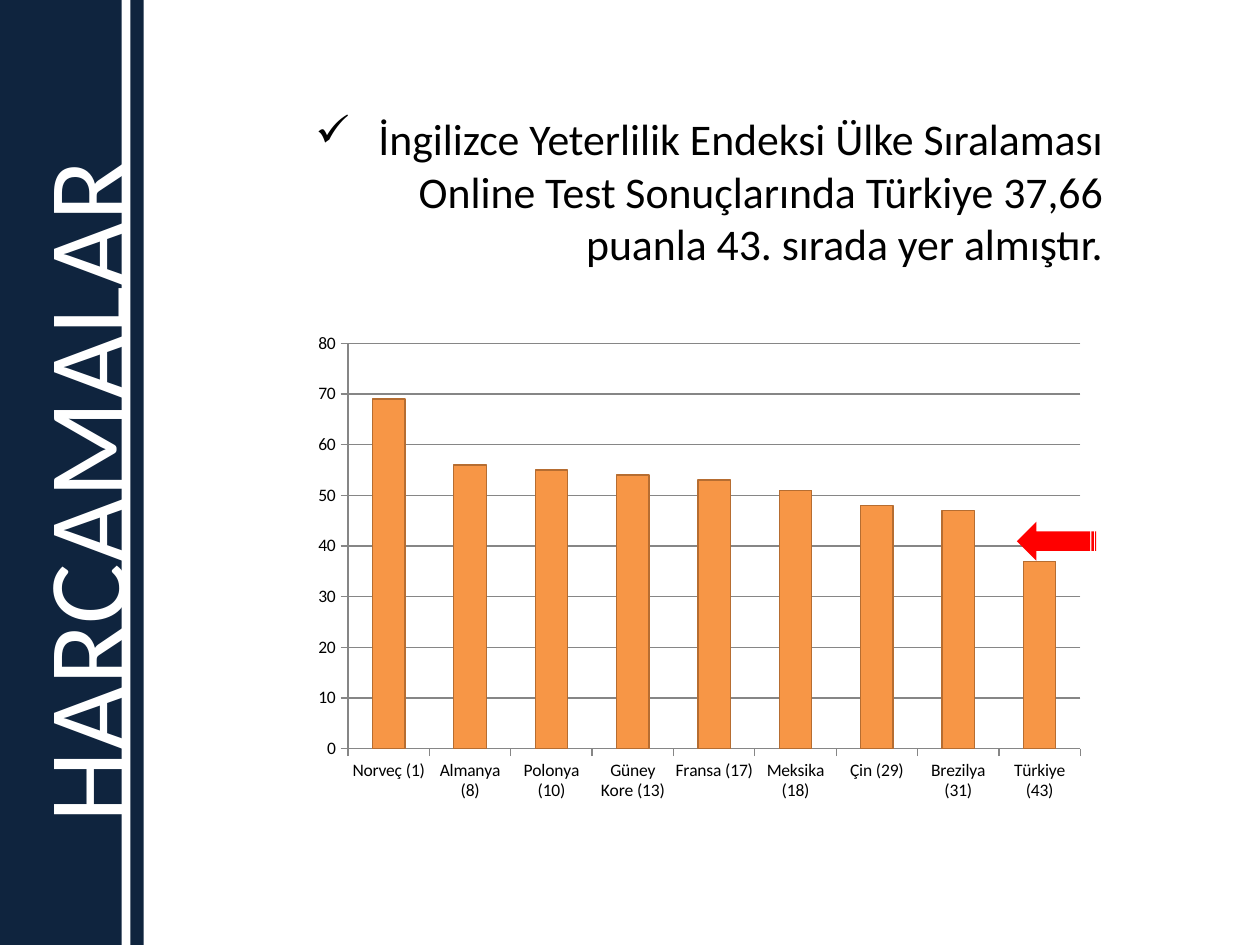
"""Build the slide on English proficiency scores by country."""
from dataclasses import dataclass

from lxml import etree
from pptx import Presentation
from pptx import util as u
from pptx.chart.data import CategoryChartData
from pptx.dml.color import RGBColor
from pptx.enum import chart as ch
from pptx.enum import shapes, text
from pptx.oxml.ns import qn

NAVY = RGBColor(0x0F, 0x24, 0x3E)
WHITE = RGBColor(0xFF, 0xFF, 0xFF)
BLACK = RGBColor(0, 0, 0)
RED = RGBColor(0xFF, 0, 0)
ORANGE = RGBColor(0xF7, 0x96, 0x46)
BROWN = RGBColor(0xB6, 0x6D, 0x31)
GREY = RGBColor(0x86, 0x86, 0x86)
FONT = "Calibri"
COLS, ROWS = 100, 75
WIDE, HIGH = u.Inches(10), u.Inches(7.5)
SCORES = {
    "Norveç (1)": 69,
    "Almanya (8)": 56,
    "Polonya (10)": 55,
    "Güney Kore (13)": 54,
    "Fransa (17)": 53,
    "Meksika (18)": 51,
    "Çin (29)": 48,
    "Brezilya (31)": 47,
    "Türkiye (43)": 37,
}


@dataclass(frozen=True)
class Box:
    """Hold a place in grid columns and rows."""
    col: float
    row: float
    cols: float
    rows: float

    def emu(self) -> tuple[int, int, int, int]:
        """Return left, top, width and height."""
        dx, dy = WIDE / COLS, HIGH / ROWS
        return (round(self.col * dx), round(self.row * dy),
                round(self.cols * dx), round(self.rows * dy))


@dataclass(frozen=True)
class Form:
    """Describe a plain filled shape."""
    box: Box
    fill: RGBColor
    kind: shapes.MSO_SHAPE = shapes.MSO_SHAPE.RECTANGLE
    turn: float = 0


BANDS = (
    Form(Box(0, 0, 11.4, ROWS), NAVY),
    Form(Box(9.65, 0, 0.7, ROWS), WHITE),
)
ARROW = Form(Box(80.7, 41.4, 6.3, 3.1), RED,
             shapes.MSO_SHAPE.STRIPED_RIGHT_ARROW, 180)


def add_form(slide, form: Form) -> None:
    """Draw a filled shape without outline or shadow."""
    shape = slide.shapes.add_shape(form.kind, *form.box.emu())
    shape.shadow.inherit = False
    shape.fill.solid()
    shape.fill.fore_color.rgb = form.fill
    shape.line.fill.background()
    shape.rotation = form.turn


def add_text(slide, words: str, box: Box, *, size: float, color: RGBColor,
             align: text.PP_ALIGN, anchor=text.MSO_ANCHOR.TOP,
             turn: float = 0, bullet: str = "") -> None:
    """Write one paragraph with the given format."""
    shape = slide.shapes.add_textbox(*box.emu())
    shape.rotation = turn
    frame = shape.text_frame
    frame.word_wrap = True
    frame.vertical_anchor = anchor
    para = frame.paragraphs[0]
    para.text = words
    para.alignment = align
    if bullet:
        props = para._p.get_or_add_pPr()
        props.set("marL", str(u.Inches(0.5)))
        props.set("indent", str(-u.Inches(0.5)))
        etree.SubElement(props, qn("a:buChar"), char=bullet)
    font = para.runs[0].font
    font.name, font.size = FONT, u.Pt(size)
    font.color.rgb = color


def add_chart(slide, box: Box) -> None:
    """Draw the column chart of scores."""
    data = CategoryChartData()
    data.categories = list(SCORES)
    data.add_series("Series 1", list(SCORES.values()))
    chart = slide.shapes.add_chart(
        ch.XL_CHART_TYPE.COLUMN_STACKED, *box.emu(), data).chart
    chart.has_legend = chart.has_title = False
    chart.font.name, chart.font.size = FONT, u.Pt(10)
    chart.font.color.rgb = BLACK
    plot = chart.plots[0]
    plot.vary_by_categories = False
    plot.gap_width, plot.overlap = 150, 100
    bars = plot.series[0].format
    bars.fill.solid()
    bars.fill.fore_color.rgb = ORANGE
    bars.line.color.rgb = BROWN
    bars.line.width = u.Pt(0.75)
    score = chart.value_axis
    score.minimum_scale, score.maximum_scale = 0, 80
    score.major_unit = 10
    score.has_major_gridlines = True
    for axis in (chart.category_axis, score):
        axis.major_tick_mark = ch.XL_TICK_MARK.OUTSIDE
        axis.minor_tick_mark = ch.XL_TICK_MARK.NONE
    for part in (chart.category_axis, score, score.major_gridlines):
        part.format.line.color.rgb = GREY
        part.format.line.width = u.Pt(0.75)


def main() -> None:
    """Build and save the slide."""
    deck = Presentation()
    deck.slide_width, deck.slide_height = WIDE, HIGH
    slide = deck.slides.add_slide(deck.slide_layouts[6])
    for band in BANDS:
        add_form(slide, band)
    add_text(slide, "HARCAMALAR", Box(-28, 30.9, 69, 16.1), size=65,
             color=WHITE, align=text.PP_ALIGN.CENTER,
             anchor=text.MSO_ANCHOR.MIDDLE, turn=270)
    add_text(slide, "İngilizce Yeterlilik Endeksi Ülke Sıralaması Online Test "
             "Sonuçlarında Türkiye 37,66 puanla 43. sırada yer almıştır.",
             Box(18.5, 8.4, 70, 37), size=25, color=BLACK,
             align=text.PP_ALIGN.RIGHT, bullet="✓")
    add_chart(slide, Box(24, 25.7, 63, 38.6))
    add_form(slide, ARROW)
    deck.save("out.pptx")


if __name__ == "__main__":
    main()
